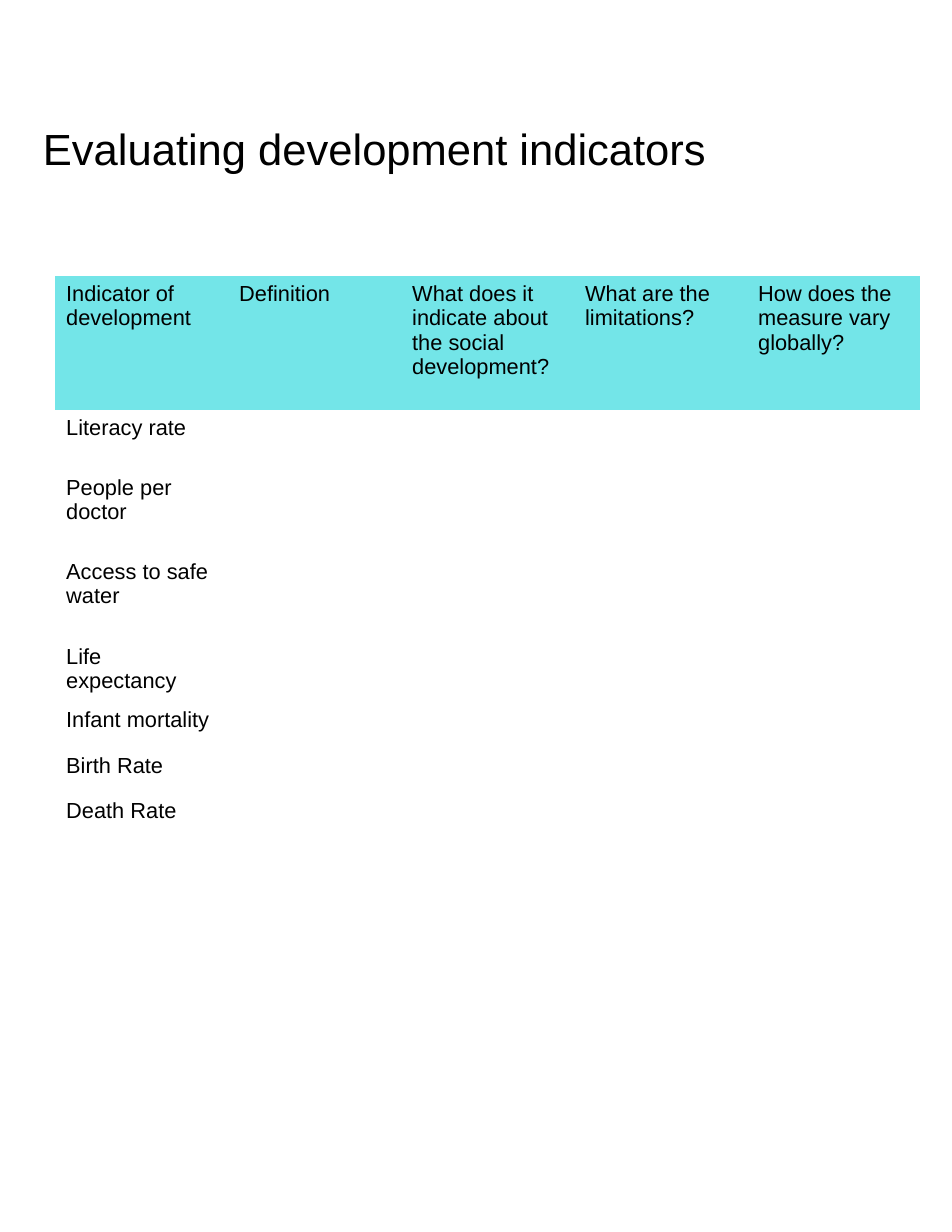
from pptx import Presentation
from pptx.dml.color import RGBColor
from pptx.enum.text import MSO_ANCHOR
from pptx.oxml.ns import qn
from pptx.util import Pt

PX = 914400 // 112
BLACK = RGBColor(0x00, 0x00, 0x00)
TURQUOISE = RGBColor(0x73, 0xE5, 0xE8)
FONT = "Arial"
NO_STYLE_NO_GRID = "{2D5ABB26-0587-4C30-8999-92F81FD0307C}"

HEADINGS = [
    "Indicator of development",
    "Definition",
    "What does it indicate about the social development?",
    "What are the limitations?",
    "How does the measure vary globally?",
]
INDICATORS = [
    "Literacy rate",
    "People per doctor",
    "Access to safe water",
    "Life expectancy",
    "Infant mortality",
    "Birth Rate",
    "Death Rate",
]
COLUMN_WIDTH = 173
ROW_HEIGHTS = [134, 60, 84, 85, 60, 46, 45, 71]


def px(length):
    return length * PX


def write_text(frame, text, size=14, color=BLACK, font=FONT):
    frame.word_wrap = True
    span = frame.paragraphs[0].add_run()
    span.text = text
    span.font.name = font
    span.font.size = Pt(size)
    span.font.color.rgb = color


def add_title(page, text):
    box = page.shapes.add_textbox(px(32), px(106), px(887), px(137))
    frame = box.text_frame
    frame.vertical_anchor = MSO_ANCHOR.TOP
    frame.margin_left = frame.margin_right = frame.margin_bottom = px(11)
    frame.margin_top = px(16)
    write_text(frame, text, size=28)


def add_indicator_table(page):
    row_count, column_count = len(INDICATORS) + 1, len(HEADINGS)
    table = page.shapes.add_table(
        row_count, column_count, px(55), px(276),
        px(COLUMN_WIDTH * column_count), px(sum(ROW_HEIGHTS)),
    ).table
    table.horz_banding = False
    table.first_row = False
    table._tbl.tblPr.find(qn("a:tableStyleId")).text = NO_STYLE_NO_GRID

    for column in table.columns:
        column.width = px(COLUMN_WIDTH)
    for row, height in zip(table.rows, ROW_HEIGHTS):
        row.height = px(height)
    for cell in table.iter_cells():
        cell.fill.background()

    # Header row
    for column, heading in enumerate(HEADINGS):
        cell = table.cell(0, column)
        cell.fill.solid()
        cell.fill.fore_color.rgb = TURQUOISE
        write_text(cell.text_frame, heading)

    # Indicator names; the other columns are left to be filled in
    for row, indicator in enumerate(INDICATORS, start=1):
        write_text(table.cell(row, 0).text_frame, indicator)


def main():
    deck = Presentation()
    deck.slide_width = px(952)
    deck.slide_height = px(1232)
    page = deck.slides.add_slide(deck.slide_layouts[6])
    add_title(page, "Evaluating development indicators")
    add_indicator_table(page)
    deck.save("out.pptx")


if __name__ == "__main__":
    main()
